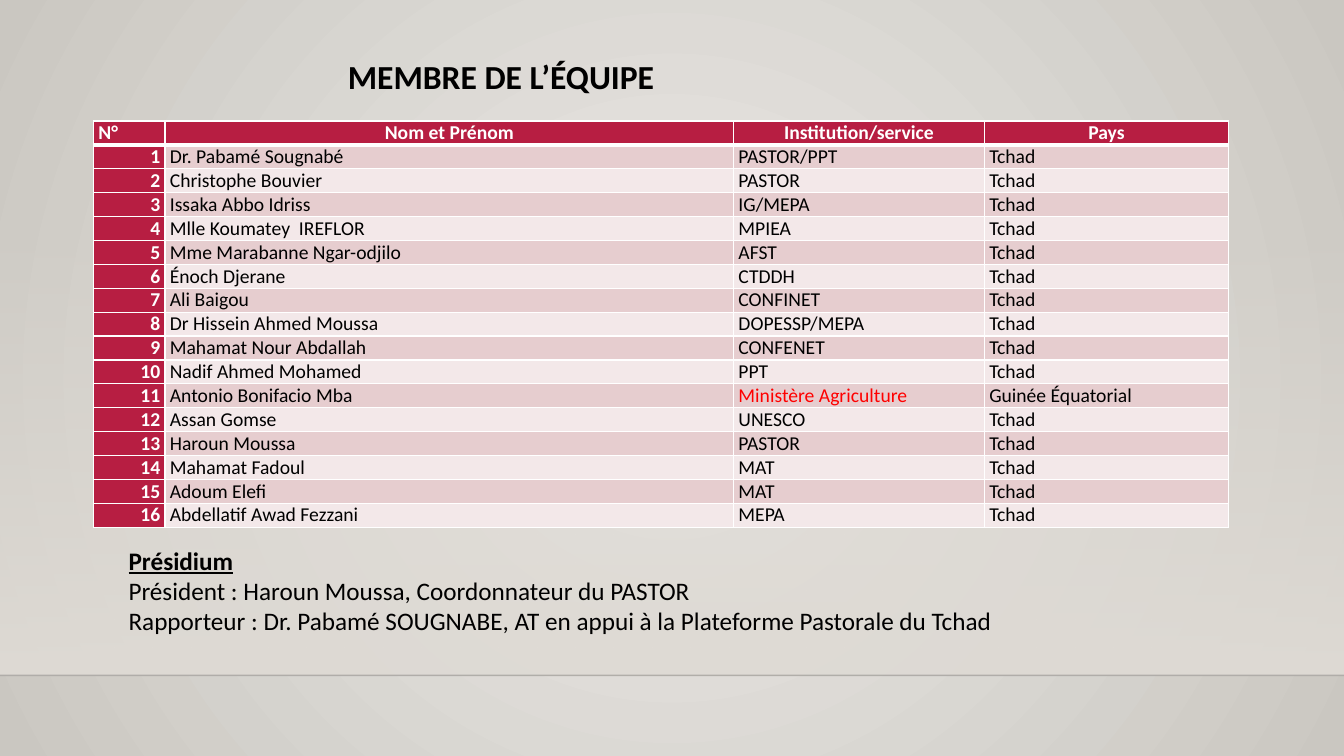
from lxml import etree
from pptx import Presentation
from pptx import util as u
from pptx.dml.color import RGBColor
from pptx.enum import shapes, text
from pptx.oxml.ns import nsdecls, qn
from pptx.oxml import parse_xml

# Content
TITLE = "MEMBRE DE L’ÉQUIPE"
HEADER = ("N°", "Nom et Prénom", "Institution/service", "Pays")
MEMBERS = [
    ("Dr. Pabamé Sougnabé", "PASTOR/PPT", "Tchad"),
    ("Christophe Bouvier", "PASTOR", "Tchad"),
    ("Issaka Abbo Idriss", "IG/MEPA", "Tchad"),
    ("Mlle Koumatey  IREFLOR", "MPIEA", "Tchad"),
    ("Mme Marabanne Ngar-odjilo", "AFST", "Tchad"),
    ("Énoch Djerane", "CTDDH", "Tchad"),
    ("Ali Baigou", "CONFINET", "Tchad"),
    ("Dr Hissein Ahmed Moussa", "DOPESSP/MEPA", "Tchad"),
    ("Mahamat Nour Abdallah", "CONFENET", "Tchad"),
    ("Nadif Ahmed Mohamed", "PPT", "Tchad"),
    ("Antonio Bonifacio Mba", "Ministère Agriculture", "Guinée Équatorial"),
    ("Assan Gomse", "UNESCO", "Tchad"),
    ("Haroun Moussa", "PASTOR", "Tchad"),
    ("Mahamat Fadoul", "MAT", "Tchad"),
    ("Adoum Elefi", "MAT", "Tchad"),
    ("Abdellatif Awad Fezzani", "MEPA", "Tchad"),
]
HIGHLIGHTED = "Ministère Agriculture"
PRESIDIUM = [
    "Présidium",
    "Président : Haroun Moussa, Coordonnateur du PASTOR",
    "Rapporteur : Dr. Pabamé SOUGNABE, AT en appui à la Plateforme Pastorale du Tchad",
]

# Colours and measures
BLACK = RGBColor(0x00, 0x00, 0x00)
WHITE = RGBColor(0xFF, 0xFF, 0xFF)
RED = RGBColor(0xFF, 0x00, 0x00)
CRIMSON = RGBColor(0xB7, 0x1E, 0x42)
ROSE = RGBColor(0xE6, 0xCD, 0xCF)
PALE_ROSE = RGBColor(0xF3, 0xE8, 0xE9)
LIGHT = RGBColor(0xEC, 0xEA, 0xE7)
STONE = RGBColor(0xCA, 0xC7, 0xC1)
SAND = RGBColor(0xDF, 0xDB, 0xD5)
NEAR_BLACK = RGBColor(0x00, 0x00, 0x01)

WIDTH, HEIGHT, FLOOR = u.Cm(33.87), u.Cm(19.05), u.Cm(17.02)
COLUMNS = [u.Cm(c) for c in (1.8, 14.33, 6.32, 6.15)]
ROW_HEIGHT = u.Cm(0.6)
LEFT = u.Cm(2.36)
ALIGN = text.PP_ALIGN


def set_format(target, values):
    for name, value in values.items():
        setattr(target, name, value)


def set_font(p, size, color, **values):
    set_format(p.font, dict(values, name="Calibri", size=u.Pt(size)))
    p.font.color.rgb = color


def set_gradient(fill, root, stops, direction):
    """Stops are (percent, colour, opacity percent)."""
    fill.gradient()
    marks = "".join(
        f'<a:gs pos="{at * 1000}"><a:srgbClr val="{color}">'
        f'<a:alpha val="{alpha * 1000}"/></a:srgbClr></a:gs>'
        for at, color, alpha in stops)
    grad = root.find(".//" + qn("a:gradFill"))
    grad.getparent().replace(grad, parse_xml(
        f'<a:gradFill {nsdecls("a")} rotWithShape="1">'
        f'<a:gsLst>{marks}</a:gsLst>{direction}</a:gradFill>'))


def set_borders(cell, top, bottom):
    tc_pr = cell._tc.get_or_add_tcPr()
    for i, (side, width) in enumerate(dict(L=1, R=1, T=top, B=bottom).items()):
        tc_pr.insert(i, parse_xml(
            f'<a:ln{side} {nsdecls("a")} w="{u.Pt(width)}"><a:solidFill>'
            f'<a:srgbClr val="{WHITE}"/></a:solidFill></a:ln{side}>'))


prs = Presentation()
prs.slide_width, prs.slide_height = WIDTH, HEIGHT
s = prs.slides.add_slide(prs.slide_layouts[5])

# Background, wall shade and floor line
set_gradient(s.background.fill, s.element, [(0, LIGHT, 100), (100, STONE, 100)],
             '<a:path path="circle"><a:fillToRect l="50000" t="50000" '
             'r="50000" b="50000"/></a:path>')
wall_top = u.Cm(5.61)
wall = s.shapes.add_shape(shapes.MSO_SHAPE.RECTANGLE, 0, wall_top,
                          WIDTH, FLOOR - wall_top)
wall.shadow.inherit = False
wall.line.fill.background()
set_gradient(wall.fill, wall.element, [(0, SAND, 0), (100, SAND, 100)],
             '<a:lin ang="5400000" scaled="0"/>')

floor = s.shapes.add_connector(shapes.MSO_CONNECTOR.STRAIGHT, 0, FLOOR, WIDTH, FLOOR)
floor.line.width = u.Pt(1)
floor.line.color.rgb = NEAR_BLACK
sp_pr = floor.element.spPr
etree.SubElement(sp_pr.find(".//" + qn("a:srgbClr")), qn("a:alpha"), val="20000")
etree.SubElement(sp_pr, qn("a:effectLst"))

# Title
title = s.shapes.title
set_format(title, dict(left=u.Cm(8.51), top=u.Cm(1.4),
                       width=u.Cm(15.37), height=u.Cm(1.96)))
tf = title.text_frame
set_format(tf, dict(text=TITLE, word_wrap=True, auto_size=text.MSO_AUTO_SIZE.NONE,
                    vertical_anchor=text.MSO_ANCHOR.TOP))
p = tf.paragraphs[0]
set_format(p, dict(alignment=ALIGN.LEFT, line_spacing=0.9))
set_font(p, 24, BLACK, bold=True)

# Table of members
rows = [HEADER] + [(str(n), *m) for n, m in enumerate(MEMBERS, 1)]
table = s.shapes.add_table(len(rows), len(COLUMNS), LEFT, u.Cm(3.05),
                           sum(COLUMNS), ROW_HEIGHT * len(rows)).table
for column, width in zip(table.columns, COLUMNS):
    column.width = width
for r, values in enumerate(rows):
    table.rows[r].height = ROW_HEIGHT
    for c, value in enumerate(values):
        cell = table.cell(r, c)
        heading = r == 0 or c == 0
        set_format(cell, dict(text=value, vertical_anchor=text.MSO_ANCHOR.BOTTOM,
                              margin_left=u.Cm(0.12), margin_right=u.Cm(0.12),
                              margin_top=0, margin_bottom=0))
        cell.fill.solid()
        cell.fill.fore_color.rgb = CRIMSON if heading else ROSE if r % 2 else PALE_ROSE
        set_borders(cell, 3 if r == 1 else 1, 3 if r == 0 else 1)
        p = cell.text_frame.paragraphs[0]
        if r == 0:
            p.alignment = ALIGN.CENTER if c else ALIGN.LEFT
        else:
            p.alignment = ALIGN.LEFT if c else ALIGN.RIGHT
        color = WHITE if heading else RED if value == HIGHLIGHTED else BLACK
        set_font(p, 14, color, bold=heading)

# Presidium
tf = s.shapes.add_textbox(LEFT, u.Cm(13.61), u.Cm(27.66), u.Cm(2.57)).text_frame
tf.word_wrap = True
for i, line in enumerate(PRESIDIUM):
    p = tf.add_paragraph() if i else tf.paragraphs[0]
    p.text = line
    p._p.get_or_add_pPr().set("marL", str(u.Cm(0.63)))
    set_font(p, 18, BLACK, bold=i == 0, underline=i == 0)

prs.save("out.pptx")
